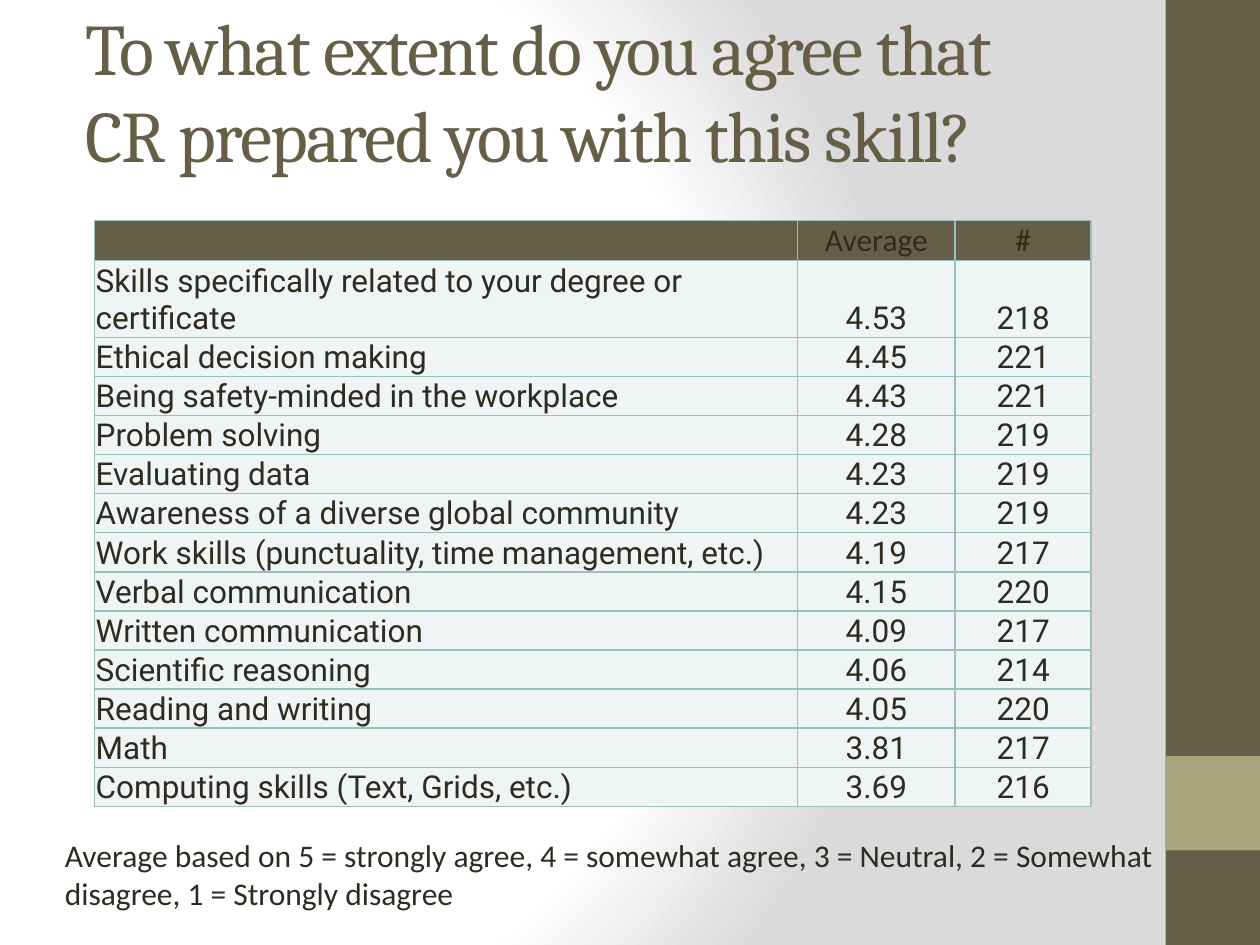
from dataclasses import dataclass

from pptx import Presentation
from pptx.dml.color import RGBColor
from pptx.enum.shapes import MSO_SHAPE
from pptx.enum.text import MSO_ANCHOR, PP_ALIGN
from pptx.oxml import parse_xml
from pptx.util import Pt

NS = 'xmlns:a="http://schemas.openxmlformats.org/drawingml/2006/main"'


@dataclass(frozen=True)
class Theme:
    brown: str = "675E47"
    olive: str = "A9A57C"
    ink: str = "2F2B20"
    pale: str = "EFF4F4"
    edge: str = "9CBEBD"
    white: str = "FFFFFF"
    gray: str = "DADADA"
    serif: str = "Cambria"
    sans: str = "Calibri"
    body: str = "Roboto"
    large: float = 41.4
    small: float = 18


THEME = Theme()

HEADS = ("", "Average", "#")
SKILLS = [
    ("Skills specifically related to your degree or certificate", "4.53", "218"),
    ("Ethical decision making", "4.45", "221"),
    ("Being safety-minded in the workplace", "4.43", "221"),
    ("Problem solving", "4.28", "219"),
    ("Evaluating data", "4.23", "219"),
    ("Awareness of a diverse global community", "4.23", "219"),
    ("Work skills (punctuality, time management, etc.)", "4.19", "217"),
    ("Verbal communication", "4.15", "220"),
    ("Written communication", "4.09", "217"),
    ("Scientific reasoning", "4.06", "214"),
    ("Reading and writing", "4.05", "220"),
    ("Math", "3.81", "217"),
    ("Computing skills (Text, Grids, etc.)", "3.69", "216"),
]


def style(para, face, size, color):
    para.font.name = face
    para.font.size = Pt(size)
    para.font.color.rgb = RGBColor.from_string(color)


def paint(slide):
    """Fill the background with a white to gray glow."""
    slide.background.fill.solid()
    stops = "".join(
        f'<a:gs pos="{pos * 1000}"><a:srgbClr val="{color}"/></a:gs>'
        for pos, color in ((0, THEME.white), (75, THEME.white), (100, THEME.gray))
    )
    glow = parse_xml(
        f'<a:gradFill {NS} rotWithShape="1"><a:gsLst>{stops}</a:gsLst>'
        '<a:path path="circle">'
        '<a:fillToRect l="20000" t="50000" r="100000" b="50000"/>'
        "</a:path></a:gradFill>"
    )
    solid = slide.element.xpath("./p:cSld/p:bg/p:bgPr/a:solidFill")[0]
    solid.getparent().replace(solid, glow)


def add_block(slide, box, color):
    block = slide.shapes.add_shape(MSO_SHAPE.RECTANGLE, *map(Pt, box))
    block.shadow.inherit = False
    block.fill.solid()
    block.fill.fore_color.rgb = RGBColor.from_string(color)
    block.line.fill.background()


def add_side(slide, box):
    """Place the side band with its square accent."""
    left, top, width, height = box
    add_block(slide, box, THEME.brown)
    add_block(slide, (left, top + height * 0.8, width, width), THEME.olive)


def add_words(slide, box, words, face, size, color):
    frame = slide.shapes.add_textbox(*map(Pt, box)).text_frame
    frame.word_wrap = True
    para = frame.paragraphs[0]
    para.text = words
    style(para, face, size, color)
    return frame


def add_title(slide, box):
    frame = add_words(
        slide, box,
        "To what extent do you agree that CR prepared you with this skill?",
        THEME.serif, THEME.large, THEME.brown,
    )
    frame.vertical_anchor = MSO_ANCHOR.MIDDLE
    run = frame.paragraphs[0].runs[0]
    run.font.size = Pt(THEME.large)
    run.font.element.set("spc", "-100") if hasattr(run.font, "element") else \
        run._r.get_or_add_rPr().set("spc", "-100")


def add_edges(cell):
    props = cell._tc.get_or_add_tcPr()
    for spot, side in enumerate("LRTB"):
        props.insert(spot, parse_xml(
            f'<a:ln{side} {NS} w="{Pt(1)}"><a:solidFill>'
            f'<a:srgbClr val="{THEME.edge}"/></a:solidFill></a:ln{side}>'
        ))


def fill_cell(cell, words, head, first):
    cell.margin_left = cell.margin_right = cell.margin_top = Pt(0.72)
    cell.margin_bottom = 0
    cell.vertical_anchor = MSO_ANCHOR.MIDDLE if head else MSO_ANCHOR.BOTTOM
    cell.fill.solid()
    cell.fill.fore_color.rgb = RGBColor.from_string(
        THEME.brown if head else THEME.pale)
    para = cell.text_frame.paragraphs[0]
    para.text = words
    para.alignment = PP_ALIGN.LEFT if first else PP_ALIGN.CENTER
    style(para, THEME.sans if head else THEME.body, THEME.small, THEME.ink)
    add_edges(cell)


def add_skills(slide, box):
    rows = [HEADS, *SKILLS]
    table = slide.shapes.add_table(len(rows), len(HEADS), *map(Pt, box)).table
    table.first_row = table.horz_banding = False
    for col, width in zip(table.columns, (401.8, 90, 77.8)):
        col.width = Pt(width)
    tall = [22.8, 42.8] + [21.9] * (len(rows) - 2)
    for row, height, texts in zip(table.rows, tall, rows):
        row.height = Pt(height)
        for spot, (cell, words) in enumerate(zip(row.cells, texts)):
            fill_cell(cell, words, texts is HEADS, spot == 0)


def add_note(slide, box):
    add_words(
        slide, box,
        "Average based on 5 = strongly agree, 4 = somewhat agree, "
        "3 = Neutral, 2 = Somewhat disagree, 1 = Strongly disagree",
        THEME.sans, THEME.small, THEME.ink,
    )


def main():
    deck = Presentation()
    deck.slide_width, deck.slide_height = Pt(720), Pt(540)
    slide = deck.slides.add_slide(deck.slide_layouts[6])
    paint(slide)
    add_side(slide, (666, 0, 54, 540))
    add_title(slide, (42, 6, 576, 90.7))
    add_skills(slide, (54, 126, 569.6, 328.4))
    add_note(slide, (30, 474, 654, 51))
    deck.save("out.pptx")


if __name__ == "__main__":
    main()
